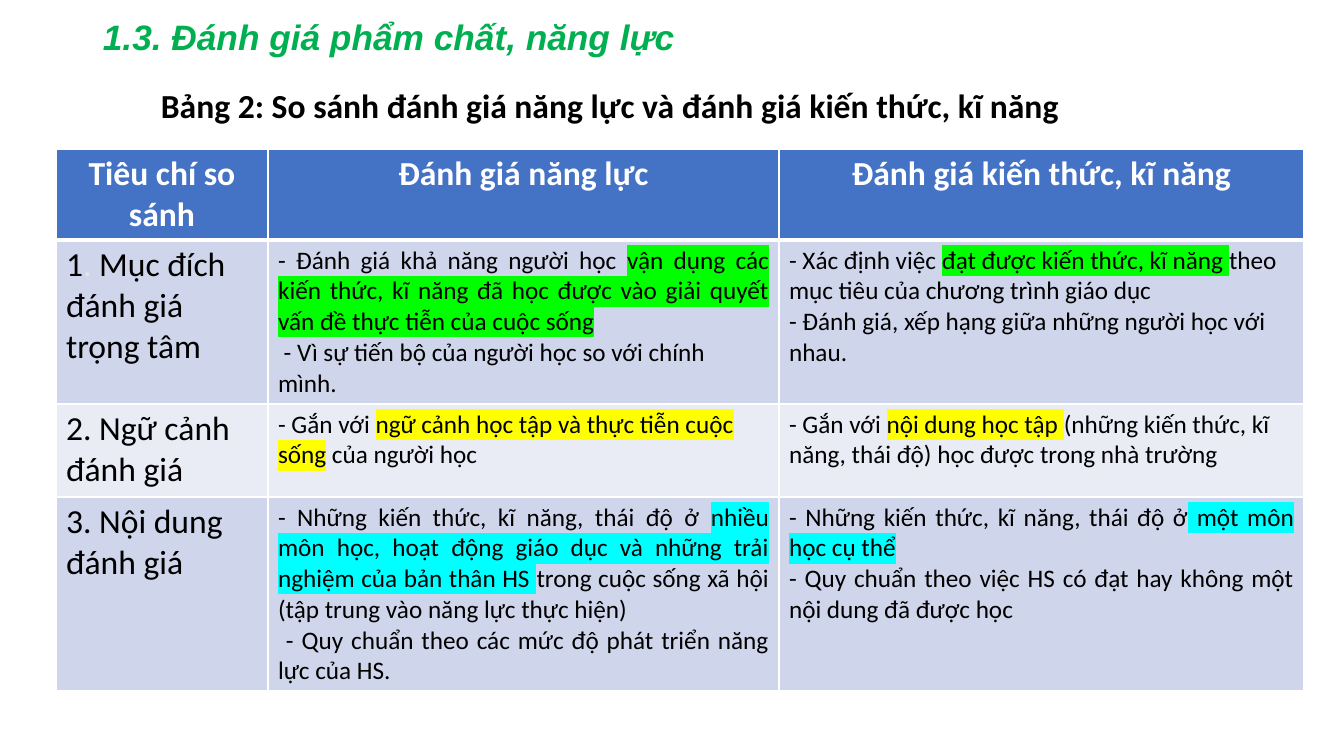
from dataclasses import dataclass

from pptx import Presentation
from pptx.dml.color import RGBColor
from pptx.enum.text import MSO_ANCHOR, PP_ALIGN as AL
from pptx.oxml import parse_xml
from pptx.oxml.ns import nsdecls
from pptx.util import Emu, Pt

SCALE = 914400 / 100.8  # EMU per px


@dataclass(frozen=True)
class Theme:
    heading_font: str = "Arial"
    body_font: str = "Calibri"
    heading: str = "00B050"
    text: str = "000000"
    white: str = "FFFFFF"
    faint: str = "E7E6E6"
    header_fill: str = "4472C4"
    bands: tuple = ("CFD5EA", "E9EBF5")
    green: str = "00FF00"
    yellow: str = "FFFF00"
    cyan: str = "00FFFF"
    heading_size: float = 25.2
    label_size: int = 24
    body_size: int = 18


T = Theme()

# Table content: a cell is a list of (alignment, runs), a run is (text, highlight)
HEADERS = ["Tiêu chí so sánh", "Đánh giá năng lực", "Đánh giá kiến thức, kĩ năng"]
LABELS = [
    [("1", T.text), (". ", T.faint), ("Mục đích đánh giá trọng tâm", T.text)],
    [("2. Ngữ cảnh đánh giá", T.text)],
    [("3. Nội dung đánh giá", T.text)],
]
BODY = [
    [
        [(AL.JUSTIFY, [("- Đánh giá khả năng người học ", None),
                       ("vận dụng các kiến thức, kĩ năng đã học được vào giải quyết "
                        "vấn đề thực tiễn của cuộc sống", T.green)]),
         (AL.LEFT, [(" - Vì sự tiến bộ của người học so với chính mình.", None)])],
        [(AL.LEFT, [("- Xác định việc ", None),
                    ("đạt được kiến thức, kĩ năng ", T.green),
                    ("theo mục tiêu của chương trình giáo dục", None)]),
         (AL.LEFT, [("- Đánh giá, xếp hạng giữa những người học với nhau.", None)])],
    ],
    [
        [(AL.LEFT, [("- Gắn với ", None),
                    ("ngữ cảnh học tập và thực tiễn cuộc sống", T.yellow),
                    (" của người học", None)])],
        [(AL.LEFT, [("- Gắn với ", None),
                    ("nội dung học tập ", T.yellow),
                    ("(những kiến thức, kĩ năng, thái độ) học được trong nhà trường", None)])],
    ],
    [
        [(AL.JUSTIFY, [("- Những kiến thức, kĩ năng, thái độ ở ", None),
                       ("nhiều môn học, hoạt động giáo dục và những trải nghiệm "
                        "của bản thân HS ", T.cyan),
                       ("trong cuộc sống xã hội (tập trung vào năng lực thực hiện)", None)]),
         (AL.JUSTIFY, [(" - Quy chuẩn theo các mức độ phát triển năng lực của HS.", None)])],
        [(AL.JUSTIFY, [("- Những kiến thức, kĩ năng, thái độ ở", None),
                       (" một môn học cụ thể", T.cyan)]),
         (AL.JUSTIFY, [("- Quy chuẩn theo việc HS có đạt hay không một nội dung "
                        "đã được học", None)])],
    ],
]


def px(n):
    return Emu(round(n * SCALE))


def add_run(p, text, size, color=T.text, font=T.body_font, bold=False, italic=False, mark=None):
    r = p.add_run()
    r.text = text
    f = r.font
    f.size, f.name, f.bold, f.italic = Pt(size), font, bold, italic
    f.color.rgb = RGBColor.from_string(color)
    if mark:
        fill = r._r.rPr.find("{*}solidFill")
        fill.addnext(parse_xml(
            f'<a:highlight {nsdecls("a")}><a:srgbClr val="{mark}"/></a:highlight>'))


def add_line(s, left, top, width, height, text, size, **style):
    """One line of text in a vertically centred box."""
    tf = s.shapes.add_textbox(px(left), px(top), px(width), px(height)).text_frame
    tf.word_wrap = True
    tf.vertical_anchor = MSO_ANCHOR.MIDDLE
    tf.margin_top = tf.margin_bottom = 0
    add_run(tf.paragraphs[0], text, size, **style)


def style_cell(cell, fill, bottom=1):
    cell.fill.solid()
    cell.fill.fore_color.rgb = RGBColor.from_string(fill)
    sides = {"L": 1, "R": 1, "T": 1, "B": bottom}
    for i, (side, width) in enumerate(sides.items()):
        cell._tc.tcPr.insert(i, parse_xml(
            f'<a:ln{side} {nsdecls("a")} w="{Pt(width)}"><a:solidFill>'
            f'<a:srgbClr val="{T.white}"/></a:solidFill></a:ln{side}>'))


def fill_body(cell, paragraphs):
    tf = cell.text_frame
    for i, (align, runs) in enumerate(paragraphs):
        p = tf.add_paragraph() if i else tf.paragraphs[0]
        p.alignment = align
        for text, mark in runs:
            add_run(p, text, T.body_size, mark=mark)


def add_comparison(s, left, top, widths, heights):
    table = s.shapes.add_table(len(heights), len(widths), px(left), px(top),
                               px(sum(widths)), px(sum(heights))).table
    for col, width in zip(table.columns, widths):
        col.width = px(width)
    for row, height in zip(table.rows, heights):
        row.height = px(height)

    # Header row
    for c, text in enumerate(HEADERS):
        cell = table.cell(0, c)
        style_cell(cell, T.header_fill, bottom=3)
        p = cell.text_frame.paragraphs[0]
        p.alignment = AL.CENTER
        add_run(p, text, T.label_size, T.white, bold=True)

    # Criterion rows
    for r, (label, bodies) in enumerate(zip(LABELS, BODY), start=1):
        for c in range(len(widths)):
            style_cell(table.cell(r, c), T.bands[(r - 1) % 2], bottom=1)
            if c:
                fill_body(table.cell(r, c), bodies[c - 1])
        for text, color in label:
            add_run(table.cell(r, 0).text_frame.paragraphs[0], text, T.label_size, color)
    # The header's thick rule is shared with the row below
    for c in range(len(widths)):
        table.cell(1, c)._tc.tcPr.find("{*}lnT").set("w", str(Pt(3)))


def main():
    prs = Presentation()
    prs.slide_width, prs.slide_height = px(1344), px(756)
    s = prs.slides.add_slide(prs.slide_layouts[6])

    # Heading and table caption
    add_line(s, 93, 15, 1160, 42, "1.3. Đánh giá phẩm chất, năng lực", T.heading_size,
             color=T.heading, font=T.heading_font, bold=True, italic=True)
    add_line(s, 151, 84, 1042, 42,
             "Bảng 2: So sánh đánh giá năng lực và đánh giá kiến thức, kĩ năng",
             T.label_size, bold=True)

    # Comparison table
    add_comparison(s, 56, 149, widths=[212, 511, 525], heights=[91, 164, 93, 194])
    prs.save("out.pptx")


if __name__ == "__main__":
    main()
